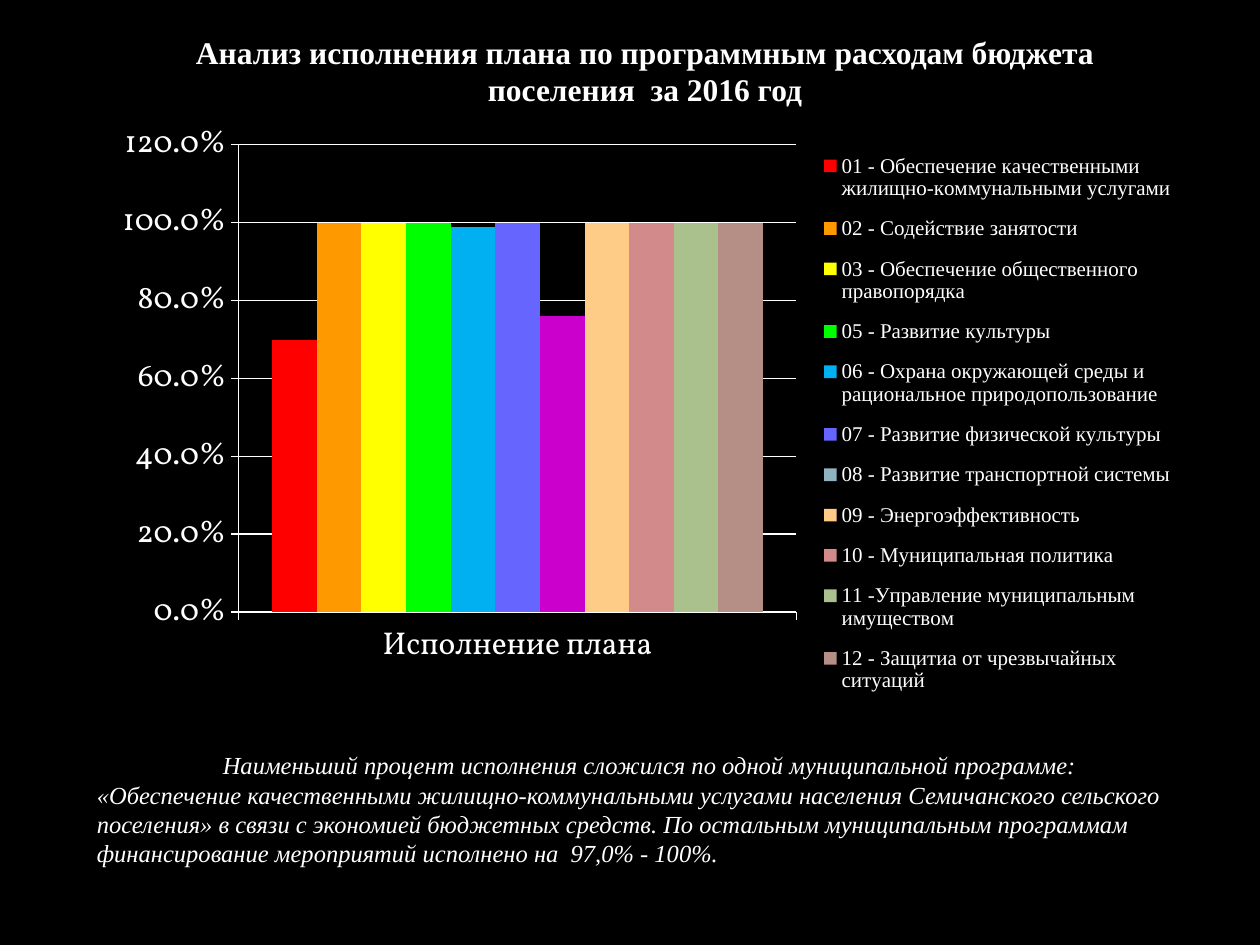
from lxml import etree
from pptx import Presentation
from pptx.chart.data import CategoryChartData
from pptx.dml.color import RGBColor
from pptx.enum.chart import XL_CHART_TYPE as ChartType
from pptx.enum.chart import XL_LEGEND_POSITION as LegendPosition
from pptx.enum.chart import XL_TICK_MARK as TickMark
from pptx.enum.text import MSO_ANCHOR as Anchor
from pptx.enum.text import PP_ALIGN as Align
from pptx.oxml.ns import qn
from pptx.util import Inches, Pt

TITLE = "Анализ исполнения плана по программным расходам бюджета поселения  за 2016 год"
NOTE = (
    "Наименьший процент исполнения сложился по одной муниципальной программе: "
    "«Обеспечение качественными жилищно-коммунальными услугами населения "
    "Семичанского сельского поселения» в связи с экономией бюджетных средств. "
    "По остальным муниципальным программам  финансирование мероприятий "
    "исполнено на  97,0% - 100%."
)
CATEGORY = "Исполнение плана"
PROGRAMMES = [  # name, share of the plan fulfilled, colour
    ("01 - Обеспечение качественными жилищно-коммунальными услугами", 0.7, "FF0000"),
    ("02 - Содействие занятости", 1, "FF9900"),
    ("03 - Обеспечение общественного правопорядка", 1, "FFFF00"),
    ("05 - Развитие культуры", 1, "00FF00"),
    ("06 - Охрана окружающей среды и рациональное природопользование", 0.99, "00B0F0"),
    ("07 - Развитие физической культуры", 1, "6666FF"),
    ("08 - Развитие транспортной системы", 0.76, "8FB3BF"),
    ("09 - Энергоэффективность", 1, "FFCC88"),
    ("10 - Муниципальная политика", 1, "D28A8A"),
    ("11 -Управление муниципальным имуществом", 1, "ABC18D"),
    ("12 - Защитиа от чрезвычайных ситуаций", 1, "B58F85"),
]
BAR_COLOURS = {"08 - Развитие транспортной системы": "CC00CC"}

THEME = {
    "background": "000000",
    "foreground": "FFFFFF",
    "text_font": "Times New Roman",
    "chart_font": "Vollkorn",
    "title_size": 18,
    "note_size": 14,
    "axis_size": 18,
    "legend_size": 12,
}
TITLE_BOX = (1.3, 0.21, 7.64, 0.71)
CHART_BOX = (0.7, 0.94, 8.91, 4.84)
NOTE_BOX = (0.67, 5.78, 8.86, 1.28)
# Fractions of the chart: left, top, width, height
PLOT_LAYOUT = (0.134, 0.043, 0.497, 0.767)
LEGEND_LAYOUT = (0.65, 0.03, 0.32, 0.94)


def colour(code):
    return RGBColor.from_string(code)


def set_font(font, name, size, **styles):
    font.name = name
    font.size = Pt(size)
    font.color.rgb = colour(THEME["foreground"])
    for style, value in styles.items():
        setattr(font, style, value)


def add_text(slide, text, box, size, align=Align.LEFT, anchor=Anchor.TOP, indent=0, **styles):
    shape = slide.shapes.add_textbox(*map(Inches, box))
    frame = shape.text_frame
    frame.word_wrap = True
    frame.vertical_anchor = anchor
    paragraph = frame.paragraphs[0]
    paragraph.alignment = align
    if indent:
        paragraph._p.get_or_add_pPr().set("indent", str(Inches(indent)))
    run = paragraph.add_run()
    run.text = text
    set_font(run.font, THEME["text_font"], size, **styles)


def set_layout(element, fractions, following, inner=False):
    """Place a chart part by hand; its layout goes before the following tag."""
    for old_layout in element.findall(qn("c:layout")):
        element.remove(old_layout)
    layout = etree.Element(qn("c:layout"))
    manual = etree.SubElement(layout, qn("c:manualLayout"))
    settings = [("layoutTarget", "inner")] if inner else []
    settings += [("xMode", "edge"), ("yMode", "edge")]
    settings += zip("xywh", map(str, fractions))
    for tag, value in settings:
        etree.SubElement(manual, qn(f"c:{tag}")).set("val", value)
    element.find(qn(following)).addprevious(layout)


def style_line(line):
    line.color.rgb = colour(THEME["foreground"])
    line.width = Pt(1)


def style_axes(chart):
    for axis in (chart.category_axis, chart.value_axis):
        axis.major_tick_mark = TickMark.OUTSIDE
        axis.minor_tick_mark = TickMark.NONE
        set_font(axis.tick_labels.font, THEME["chart_font"], THEME["axis_size"])
        style_line(axis.format.line)
    value_axis = chart.value_axis
    value_axis.minimum_scale, value_axis.maximum_scale = 0, 1.2
    value_axis.major_unit = 0.2
    value_axis.has_major_gridlines = True
    style_line(value_axis.major_gridlines.format.line)
    value_axis.tick_labels.number_format = "0.0%"
    value_axis.tick_labels.number_format_is_linked = False


def fill(format_, code):
    format_.fill.solid()
    format_.fill.fore_color.rgb = colour(code)


def add_programme_chart(slide):
    data = CategoryChartData(number_format="0.0%")
    data.categories = [CATEGORY]
    for name, share, _ in PROGRAMMES:
        data.add_series(name, [share])
    chart = slide.shapes.add_chart(
        ChartType.COLUMN_CLUSTERED, *map(Inches, CHART_BOX), data
    ).chart
    chart.has_title = False
    set_font(chart.font, THEME["chart_font"], THEME["axis_size"])
    style_axes(chart)

    plot = chart.plots[0]
    plot.vary_by_categories = False
    plot.gap_width, plot.overlap = 150, 0
    for series, (name, _, code) in zip(plot.series, PROGRAMMES):
        fill(series.format, code)
        if name in BAR_COLOURS:
            fill(series.points[0].format, BAR_COLOURS[name])

    chart.has_legend = True
    legend = chart.legend
    legend.position = LegendPosition.RIGHT
    legend.include_in_layout = False
    set_font(legend.font, THEME["text_font"], THEME["legend_size"])
    set_layout(legend._element, LEGEND_LAYOUT, "c:overlay")
    plot_area = chart._chartSpace.chart.plotArea
    set_layout(plot_area, PLOT_LAYOUT, "c:barChart", inner=True)


def main():
    presentation = Presentation()
    presentation.slide_width, presentation.slide_height = Inches(10), Inches(7.5)
    slide = presentation.slides.add_slide(presentation.slide_layouts[6])
    fill(slide.background, THEME["background"])
    add_text(slide, TITLE, TITLE_BOX, THEME["title_size"], align=Align.CENTER, bold=True)
    add_text(slide, NOTE, NOTE_BOX, THEME["note_size"], anchor=Anchor.MIDDLE, indent=1, italic=True)
    add_programme_chart(slide)
    presentation.save("out.pptx")


if __name__ == "__main__":
    main()
